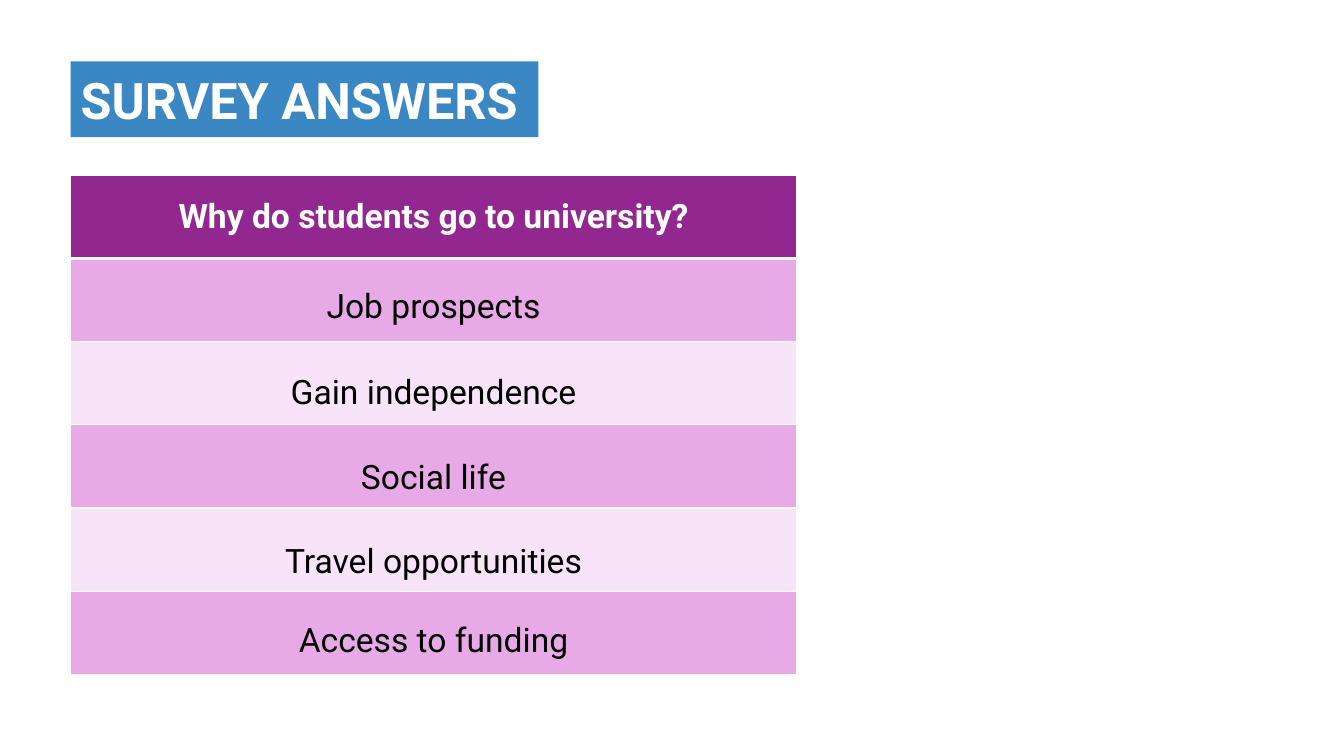
from lxml.etree import SubElement
from pptx import Presentation
from pptx.dml.color import RGBColor
from pptx.enum.text import MSO_ANCHOR, MSO_AUTO_SIZE, PP_ALIGN
from pptx.oxml.ns import qn
from pptx.util import Inches, Pt

ANSWERS = [
    ("Job prospects", 2.78),
    ("Gain independence", 3.63),
    ("Social life", 4.47),
    ("Travel opportunities", 5.31),
    ("Access to funding", 6.09),
]
LEFT, WIDTH = 0.7, 7.2


def paint(fill, color):
    """Give a fill one solid colour."""
    fill.solid()
    fill.fore_color.rgb = RGBColor.from_string(color)


def write(frame, text, size=24, color="000000", bold=False, align=PP_ALIGN.CENTER):
    """Write one formatted paragraph into a text frame."""
    para = frame.paragraphs[0]
    para.alignment = align
    span = para.add_run()
    span.text = text
    span.font.name = "Roboto"
    span.font.size = Pt(size)
    span.font.bold = bold
    span.font.color.rgb = RGBColor.from_string(color)


def border(cell, side, width, color="FFFFFF"):
    """Draw one side of a table cell."""
    properties = cell._tc.get_or_add_tcPr()
    line = SubElement(properties, qn(f"a:ln{side}"), w=str(Pt(width)))
    SubElement(SubElement(line, qn("a:solidFill")), qn("a:srgbClr"), val=color)


class SurveySlide:
    """Holds the style and the current page."""

    header = "92278F"
    bands = ("E8AAE7", "F8E4F8")
    banner = "3A87C4"

    def __init__(self, deck):
        """Add a title-only page to the deck."""
        self.page = deck.slides.add_slide(deck.slide_layouts[5])

    def title(self, text, left, top, width, height):
        """Place the title as a filled banner."""
        box = self.page.shapes.title
        box.left, box.top = Inches(left), Inches(top)
        box.width, box.height = Inches(width), Inches(height)
        paint(box.fill, self.banner)
        frame = box.text_frame
        frame.auto_size = MSO_AUTO_SIZE.NONE
        frame.vertical_anchor = MSO_ANCHOR.MIDDLE
        write(frame, text, size=36, color="FFFFFF", bold=True, align=PP_ALIGN.LEFT)

    def table(self, question, bands, left, top, width, height):
        """Draw a question header over a stack of banded rows."""
        grid = self.page.shapes.add_table(
            bands + 1, 1, Inches(left), Inches(top), Inches(width), Inches(height)
        ).table
        for index in range(bands + 1):
            cell = grid.cell(index, 0)
            border(cell, "L", 1)
            border(cell, "R", 1)
            border(cell, "T", 3 if index == 1 else 1)
            border(cell, "B", 3 if index == 0 else 1)
            paint(cell.fill, self.bands[(index - 1) % 2] if index else self.header)
        heading = grid.cell(0, 0)
        heading.vertical_anchor = MSO_ANCHOR.MIDDLE
        write(heading.text_frame, question, color="FFFFFF", bold=True)

    def answer(self, text, left, top, width, height=0.5):
        """Place one answer over the table."""
        box = self.page.shapes.add_textbox(
            Inches(left), Inches(top), Inches(width), Inches(height)
        )
        box.text_frame.word_wrap = True
        box.text_frame.auto_size = MSO_AUTO_SIZE.SHAPE_TO_FIT_TEXT
        write(box.text_frame, text)


def main():
    """Build and save the deck."""
    deck = Presentation()
    deck.slide_width, deck.slide_height = Inches(13.33), Inches(7.5)
    slide = SurveySlide(deck)
    slide.title("SURVEY ANSWERS", LEFT, 0.61, 4.64, 0.75)
    slide.table("Why do students go to university?", len(ANSWERS), LEFT, 1.74, WIDTH, 4.95)
    for text, top in ANSWERS:
        slide.answer(text, LEFT, top, WIDTH)
    deck.save("out.pptx")


if __name__ == "__main__":
    main()
